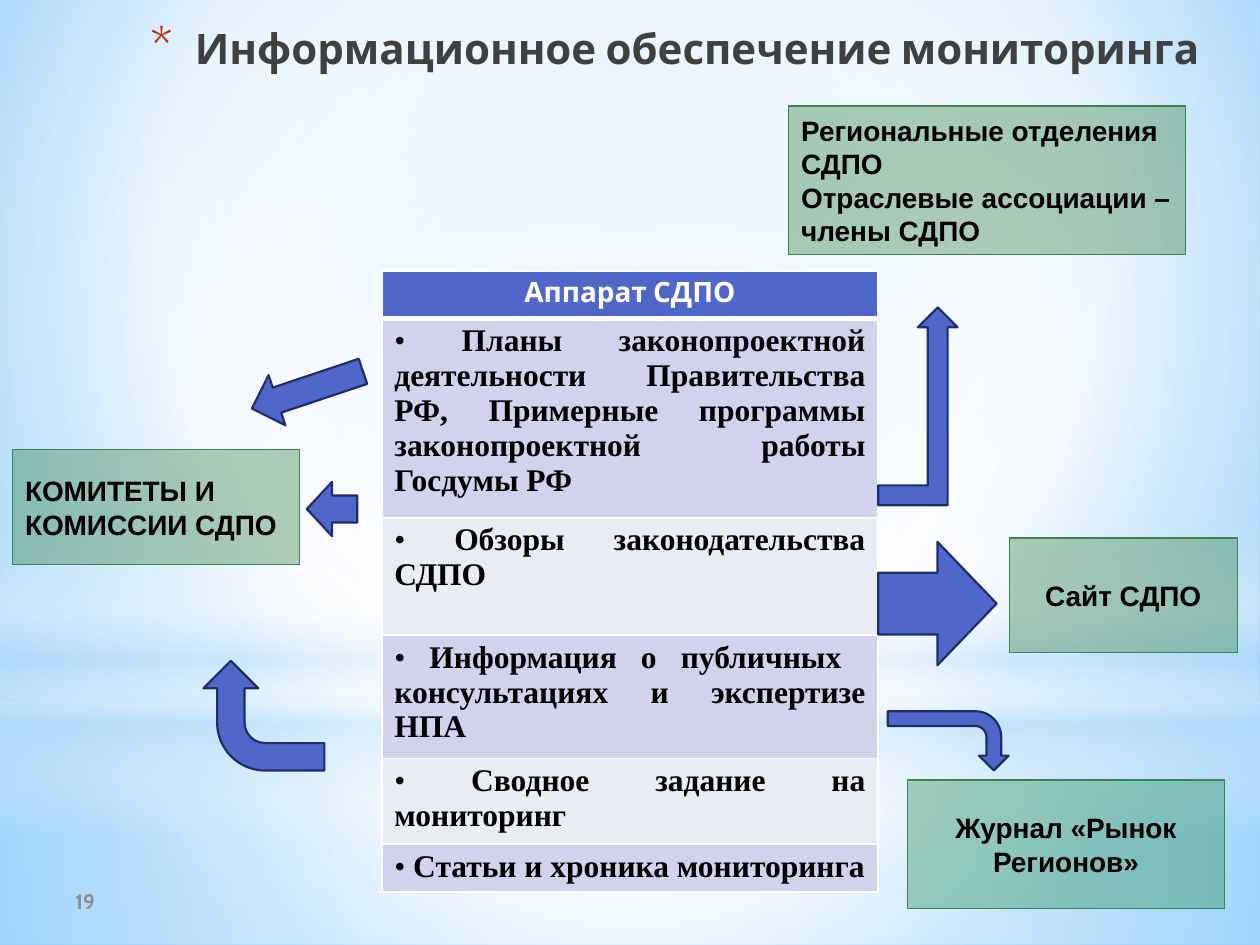
from lxml import etree
from pptx import Presentation
from pptx.dml.color import RGBColor
from pptx.enum.shapes import MSO_SHAPE as Kind
from pptx.enum.text import MSO_ANCHOR as Anchor, PP_ALIGN as Align
from pptx.oxml import parse_xml
from pptx.oxml.ns import nsdecls, qn
from pptx.util import Inches, Pt

ROWS = [
    (1.47, "Планы законопроектной деятельности Правительства РФ, "
           "Примерные программы законопроектной работы Госдумы РФ"),
    (0.93, "Обзоры законодательства СДПО"),
    (0.93, "Информация о публичных  консультациях и экспертизе НПА"),
    (0.65, "Сводное задание на мониторинг"),
    (0.37, "Статьи и хроника мониторинга"),
]
NOTES = [
    ((8.01, 4.27, 1.81, 0.91), ["Сайт СДПО"], "3B854D", Align.CENTER),
    ((7.2, 6.19, 2.52, 1.02), ["Журнал «Рынок Регионов»"], "2F915B", Align.CENTER),
    ((6.26, 0.84, 3.15, 1.18), ["Региональные отделения СДПО",
     "Отраслевые ассоциации – члены СДПО"], "3B854D", Align.LEFT),
    ((0.1, 3.57, 2.28, 0.91), ["КОМИТЕТЫ И КОМИССИИ СДПО"], "3B854D", Align.LEFT),
]
ARROWS = [
    (Kind.DOWN_ARROW, (6.95, 4.32, 0.98, 0.94), 270),
    (Kind.DOWN_ARROW, (2.42, 3.84, 0.43, 0.4), 90),
    (Kind.DOWN_ARROW, (2.23, 2.63, 0.42, 0.93), 71.5),
    (Kind.BENT_UP_ARROW, (6.97, 2.44, 0.63, 1.57), 0),
    (Kind.BENT_ARROW, (1.66, 5.2, 0.87, 0.96), 270),
    (Kind.BENT_ARROW, (7.29, 5.4, 0.47, 0.96), 90),
]
CENTER = (50, 50, 50, 50)
GLOWS = [
    (Kind.RECTANGLE, (0, 5.58, 10, 1.92), CENTER,
     [(0, "FFFFFF", 91), (37, "FFFFFF", 76), (100, "B4DCFA", 79)]),
    (Kind.RECTANGLE, (0, 0, 10, 5.58), CENTER,
     [(0, "FFFFFF", 89), (48, "FFFFFF", 62), (100, "B4DCFA", 79)]),
    (Kind.RECTANGLE, (0, 4.12, 10, 2.5), None,
     [(0, "FFFFFF", 0), (29, "FFFFFF", 30), (45, "B4DCFA", 40),
      (55, "FFFFFF", 26), (65, "B4DCFA", 60), (100, "FFFFFF", 0)]),
    (Kind.OVAL, (0, 1.75, 10, 5.58), CENTER,
     [(0, "FFFFFF", 100), (56, "FFFFFF", 0)]),
]


def rgb(code):
    """Turn a hex string into a colour."""
    return RGBColor.from_string(code)


def inch(box):
    """Turn a box of numbers into lengths."""
    return [Inches(n) for n in box]


def write(frame, lines, size=16, font="Arial", color="000000", align=Align.LEFT,
          anchor=Anchor.MIDDLE):
    """Fill a text frame with bold lines."""
    frame.word_wrap = True
    frame.vertical_anchor = anchor
    for i, line in enumerate(lines):
        par = frame.add_paragraph() if i else frame.paragraphs[0]
        par.alignment = align
        run = par.add_run()
        run.text = line
        run.font.size, run.font.name, run.font.bold = Pt(size), font, True
        run.font.color.rgb = rgb(color)


def bullet(par, char, font, color=None, scale=100, hang=0.0):
    """Give a paragraph a bullet and a hanging indent."""
    prop = par._p.get_or_add_pPr()
    prop.set("marL", str(Inches(hang)))
    prop.set("indent", str(-Inches(hang)))
    if color:
        tint = etree.SubElement(prop, qn("a:buClr"))
        etree.SubElement(tint, qn("a:srgbClr"), val=color)
    etree.SubElement(prop, qn("a:buSzPct"), val=str(scale * 1000))
    etree.SubElement(prop, qn("a:buFont"), typeface=font)
    etree.SubElement(prop, qn("a:buChar"), char=char)


def blend(root, stops, focus):
    """Swap the gradient under root for a radial or a downward one."""
    marks = "".join(
        f'<a:gs pos="{pos * 1000}"><a:srgbClr val="{code}">'
        f'<a:alpha val="{alpha * 1000}"/></a:srgbClr></a:gs>'
        for pos, code, alpha in stops)
    way = '<a:lin ang="5400000" scaled="0"/>'
    if focus:
        rect = " ".join(f'{s}="{n * 1000}"' for s, n in zip("ltrb", focus))
        way = f'<a:path path="circle"><a:fillToRect {rect}/></a:path>'
    old = root.find(".//" + qn("a:gradFill"))
    old.getparent().replace(old, parse_xml(
        f'<a:gradFill {nsdecls("a")} rotWithShape="1">'
        f'<a:gsLst>{marks}</a:gsLst>{way}</a:gradFill>'))


def block(slide, kind, box):
    """Add a preset shape without shadow."""
    shape = slide.shapes.add_shape(kind, *inch(box))
    shape.shadow.inherit = False
    return shape


def ink(shape, fill, line, width):
    """Set a plain fill and outline."""
    shape.fill.solid()
    shape.fill.fore_color.rgb = rgb(fill)
    shape.line.color.rgb = rgb(line)
    shape.line.width = Pt(width)


def sky(slide):
    """Paint the background and its soft glows."""
    slide.background.fill.gradient()
    blend(slide._element, [(0, "9ED5FF", 100), (60, "FFFFFF", 100),
                           (100, "5BB9FF", 100)], (20, 10, 20, 60))
    for kind, box, focus, stops in GLOWS:
        glow = block(slide, kind, box)
        glow.line.fill.background()
        glow.fill.gradient()
        blend(glow._element, stops, focus)


def label(slide, box, text, **form):
    """Add a text box and return its paragraph."""
    frame = slide.shapes.add_textbox(*inch(box)).text_frame
    write(frame, [text], font="Cabin", **form)
    return frame.paragraphs[0]


def note(slide, box, lines, fill, align):
    """Add a translucent green box with text."""
    shape = block(slide, Kind.RECTANGLE, box)
    ink(shape, fill, "3B854D", 0.75)
    tint = shape._element.spPr.find(qn("a:solidFill"))[0]
    etree.SubElement(tint, qn("a:alpha"), val="40000")
    write(shape.text_frame, lines, align=align)


def arrow(slide, kind, box, turn):
    """Add a blue block arrow."""
    shape = block(slide, kind, box)
    ink(shape, "4E67C8", "1F2E69", 1.25)
    shape.rotation = turn


def edge(cell, top, base):
    """Draw white borders on a cell."""
    prop = cell._tc.get_or_add_tcPr()
    for i, (side, width) in enumerate(zip("LRTB", (1, 1, top, base))):
        prop.insert(i, parse_xml(
            f'<a:ln{side} {nsdecls("a")} w="{Pt(width)}"><a:solidFill>'
            f'<a:srgbClr val="FFFFFF"/></a:solidFill></a:ln{side}>'))


def office(slide, box):
    """Add the central table."""
    table = slide.shapes.add_table(len(ROWS) + 1, 1, *inch(box)).table
    for i, (high, text) in enumerate([(0.38, "Аппарат СДПО")] + ROWS):
        table.rows[i].height = Inches(high)
        cell = table.cell(i, 0)
        cell.fill.solid()
        if i:
            cell.fill.fore_color.rgb = rgb("D0D3EB" if i % 2 else "E9EBF5")
            write(cell.text_frame, [" " + text], size=18, font="Times New Roman",
                  align=Align.JUSTIFY, anchor=Anchor.TOP)
            bullet(cell.text_frame.paragraphs[0], "•", "Times New Roman")
        else:
            cell.fill.fore_color.rgb = rgb("4E67C8")
            write(cell.text_frame, [text], font="Cabin", color="FFFFFF",
                  align=Align.CENTER, anchor=Anchor.TOP)
        cell.margin_top = cell.margin_bottom = Inches(0.04)
        edge(cell, 3 if i == 1 else 1, 1 if i else 3)


def main():
    """Build and save the slide."""
    deck = Presentation()
    deck.slide_width, deck.slide_height = Inches(10), Inches(7.5)
    slide = deck.slides.add_slide(deck.slide_layouts[6])
    sky(slide)
    head = label(slide, (0.59, 0.13, 9.03, 0.68),
                 "Информационное обеспечение мониторинга", size=24,
                 color="404040", align=Align.RIGHT, anchor=Anchor.TOP)
    bullet(head, "*", "Cabin", "C3260C", 128, 0.35)
    label(slide, (0.5, 6.95, 2.33, 0.4), "19", size=12, color="8C8C8C")
    for item in NOTES:
        note(slide, *item)
    office(slide, (3.03, 2.15, 3.94, 4.73))
    for item in ARROWS:
        arrow(slide, *item)
    deck.save("out.pptx")


if __name__ == "__main__":
    main()
